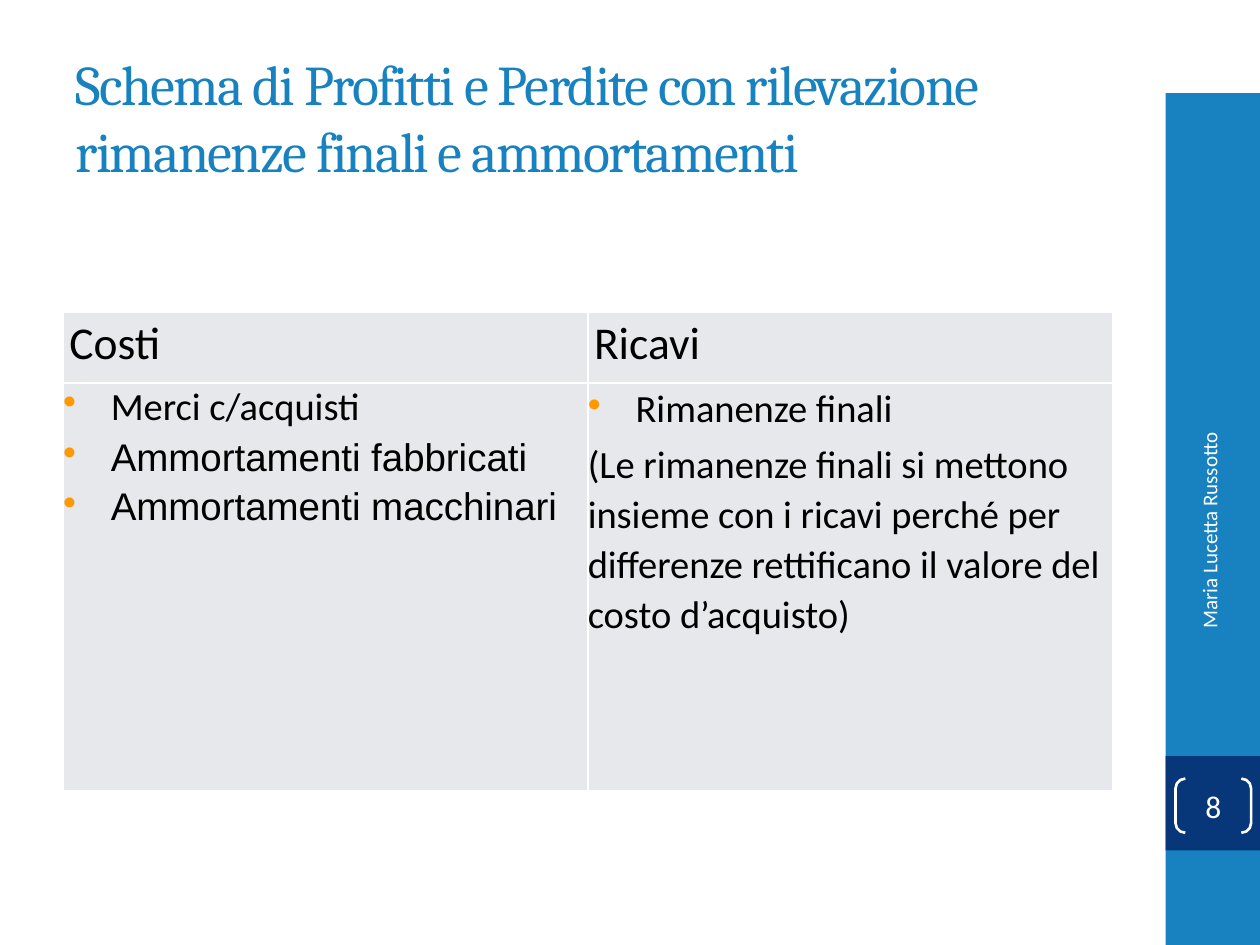
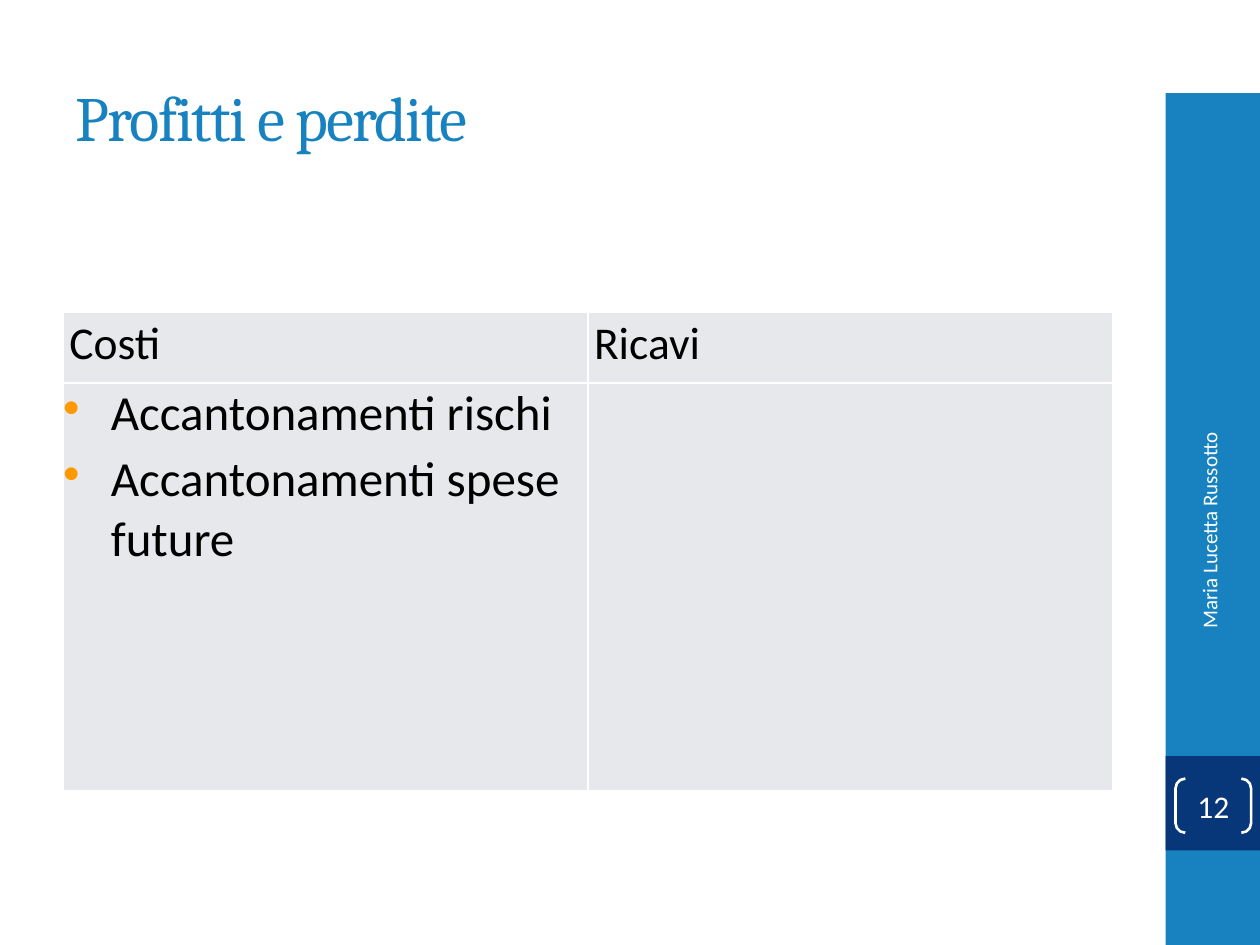
from dataclasses import dataclass

from lxml.etree import SubElement
from pptx import Presentation
from pptx.dml.color import RGBColor
from pptx.enum.shapes import MSO_SHAPE as Preset
from pptx.enum.text import MSO_ANCHOR as Anchor, MSO_AUTO_SIZE as AutoSize, PP_ALIGN as Align
from pptx.oxml.ns import qn
from pptx.util import Inches, Pt

COLUMNS, ROWS = 10, 7.5
SLIDE_WIDTH, SLIDE_HEIGHT = Inches(10), Inches(7.5)


@dataclass(frozen=True)
class Theme:
    """Colours, fonts and type sizes of the deck."""
    blue: str = "1782BF"
    navy: str = "073779"
    orange: str = "FF9900"
    grey: str = "E7E8EC"
    white: str = "FFFFFF"
    black: str = "000000"
    title_font: str = "Cambria"
    body_font: str = "Calibri"
    alternate_font: str = "Arial"
    header_size: int = 26
    number_size: int = 18
    author_size: int = 12


@dataclass(frozen=True)
class Box:
    """Area measured in columns and rows of the slide grid."""
    left: float
    top: float
    width: float
    height: float

    def inside(self, left, top, width, height):
        """Return a box offset from this box's corner."""
        return Box(self.left + left, self.top + top, width, height)

    def frame(self):
        """Return left, top, width and height as slide lengths."""
        column, row = SLIDE_WIDTH / COLUMNS, SLIDE_HEIGHT / ROWS
        return (int(self.left * column), int(self.top * row),
                int(self.width * column), int(self.height * row))


@dataclass(frozen=True)
class Entry:
    """One paragraph of a table cell."""
    text: str
    size: int
    font: str
    bullet: bool = True
    line_spacing: float = 1.01


THEME = Theme()
TITLE = Box(0.5, 0.3, 8.33, 1.25)
ACCOUNT = Box(0.5, 2.48, 8.33, 3.8)
RAIL = Box(9.25, 0.74, 0.75, 6.76)
HEADER_ROWS = 0.56
AUTHOR = "Maria Lucetta Russotto"


def format_runs(paragraph, size, font, color):
    """Apply one text style to every run of a paragraph."""
    for run in paragraph.runs:
        run.font.size = Pt(size)
        run.font.name = font
        run.font.color.rgb = RGBColor.from_string(color)


def place(shape, box):
    """Move and size a shape to a box."""
    shape.left, shape.top, shape.width, shape.height = box.frame()


def add_band(slide, box, color):
    """Add a plain filled rectangle."""
    band = slide.shapes.add_shape(Preset.RECTANGLE, *box.frame())
    band.shadow.inherit = False
    band.fill.solid()
    band.fill.fore_color.rgb = RGBColor.from_string(color)
    band.line.fill.background()


def add_author(slide, box):
    """Add the author's name reading upwards."""
    author = slide.shapes.add_textbox(*box.frame())
    author.rotation = 270
    frame = author.text_frame
    frame.word_wrap = True
    frame.vertical_anchor = Anchor.MIDDLE
    frame.text = AUTHOR
    paragraph = frame.paragraphs[0]
    paragraph.alignment = Align.RIGHT
    format_runs(paragraph, THEME.author_size, THEME.body_font, THEME.white)


def add_number(slide, box, number):
    """Add the slide number between brackets."""
    brackets = slide.shapes.add_shape(Preset.DOUBLE_BRACKET, *box.frame())
    brackets.shadow.inherit = False
    brackets.adjustments[0] = 0.18
    brackets.fill.background()
    brackets.line.color.rgb = RGBColor.from_string(THEME.white)
    brackets.line.width = Pt(1.5)
    frame = brackets.text_frame
    frame.margin_left = frame.margin_top = frame.margin_right = frame.margin_bottom = 0
    frame.vertical_anchor = Anchor.MIDDLE
    frame.text = str(number)
    paragraph = frame.paragraphs[0]
    paragraph.alignment = Align.CENTER
    format_runs(paragraph, THEME.number_size, THEME.body_font, THEME.white)


def add_rail(slide, box, number):
    """Add the side rail with author and slide number."""
    add_band(slide, box, THEME.blue)
    square = box.inside(0, 5.26, box.width, box.width)
    add_band(slide, square, THEME.navy)
    add_author(slide, box.inside(-0.95, 3.69, 2.59, 0.4))
    add_number(slide, square.inside(0.08, 0.18, 0.6, 0.43), number)


def set_title(slide, box, text, size):
    """Fill and format the title placeholder."""
    title = slide.shapes.title
    place(title, box)
    frame = title.text_frame
    frame.auto_size = AutoSize.NONE
    frame.word_wrap = True
    frame.vertical_anchor = Anchor.MIDDLE
    frame.text = text
    paragraph = frame.paragraphs[0]
    paragraph.alignment = Align.LEFT
    format_runs(paragraph, size, THEME.title_font, THEME.blue)
    for run in paragraph.runs:
        run.font._element.set("spc", "-100")


def style_cell(cell):
    """Give a cell white borders, a grey fill and no margins."""
    properties = cell._tc.get_or_add_tcPr()
    for side in ("lnL", "lnR", "lnT", "lnB"):
        line = SubElement(properties, qn(f"a:{side}"), w=str(Pt(1)))
        fill = SubElement(line, qn("a:solidFill"))
        SubElement(fill, qn("a:srgbClr"), val=THEME.white)
    cell.fill.solid()
    cell.fill.fore_color.rgb = RGBColor.from_string(THEME.grey)
    cell.margin_left = cell.margin_top = cell.margin_right = cell.margin_bottom = 0


def add_bullet(paragraph):
    """Give a paragraph an orange bullet and a hanging indent."""
    properties = paragraph._p.get_or_add_pPr()
    properties.set("marL", str(Inches(0.38)))
    properties.set("indent", str(-Inches(0.38)))
    color = SubElement(properties, qn("a:buClr"))
    SubElement(color, qn("a:srgbClr"), val=THEME.orange)
    SubElement(properties, qn("a:buChar"), char="•")


def fill_header(cell, text):
    """Write a column heading."""
    cell.text_frame.text = text
    paragraph = cell.text_frame.paragraphs[0]
    paragraph._p.get_or_add_pPr().set("marL", str(Inches(0.05)))
    paragraph.line_spacing = 1.07
    format_runs(paragraph, THEME.header_size, THEME.body_font, THEME.black)


def fill_entries(cell, entries):
    """Write the entries of one side of the account."""
    frame = cell.text_frame
    frame.text = "\n".join(entry.text for entry in entries)
    for index, (paragraph, entry) in enumerate(zip(frame.paragraphs, entries)):
        if entry.bullet:
            add_bullet(paragraph)
        paragraph.line_spacing = entry.line_spacing
        if index:
            paragraph.space_before = Pt(3.2)
        format_runs(paragraph, entry.size, entry.font, THEME.black)


def add_account(slide, box, costs, revenues):
    """Add the two-column table of costs and revenues."""
    table = slide.shapes.add_table(2, 2, *box.frame()).table
    table.first_row = table.horz_banding = False
    row_height = SLIDE_HEIGHT / ROWS
    table.rows[0].height = int(HEADER_ROWS * row_height)
    table.rows[1].height = int((box.height - HEADER_ROWS) * row_height)
    for cell in table.iter_cells():
        style_cell(cell)
    sides = (("Costi", costs), ("Ricavi", revenues))
    for column, (heading, entries) in enumerate(sides):
        fill_header(table.cell(0, column), heading)
        fill_entries(table.cell(1, column), entries)


def add_account_slide(presentation, number, title, title_size, costs, revenues=()):
    """Add a slide with title, account table and side rail."""
    slide = presentation.slides.add_slide(presentation.slide_layouts[5])
    set_title(slide, TITLE, title, title_size)
    add_account(slide, ACCOUNT, costs, revenues)
    add_rail(slide, RAIL, number)


def main():
    """Build and save the presentation."""
    presentation = Presentation()
    presentation.slide_width, presentation.slide_height = SLIDE_WIDTH, SLIDE_HEIGHT
    add_account_slide(
        presentation, 8,
        "Schema di Profitti e Perdite con rilevazione rimanenze finali e ammortamenti", 32,
        costs=(
            Entry("Merci c/acquisti", 22, THEME.body_font),
            Entry("Ammortamenti fabbricati", 22, THEME.alternate_font),
            Entry("Ammortamenti macchinari", 22, THEME.alternate_font),
        ),
        revenues=(
            Entry("Rimanenze finali", 22, THEME.body_font, line_spacing=1.07),
            Entry("(Le rimanenze finali si mettono insieme con i ricavi perché per "
                  "differenze rettificano il valore del costo d’acquisto)",
                  22, THEME.body_font, bullet=False, line_spacing=1.07),
        ),
    )
    add_account_slide(
        presentation, 12, "Profitti e perdite", 36,
        costs=(
            Entry("Accantonamenti rischi", 28, THEME.body_font),
            Entry("Accantonamenti spese future", 28, THEME.body_font),
        ),
    )
    presentation.save("out.pptx")


if __name__ == "__main__":
    main()
